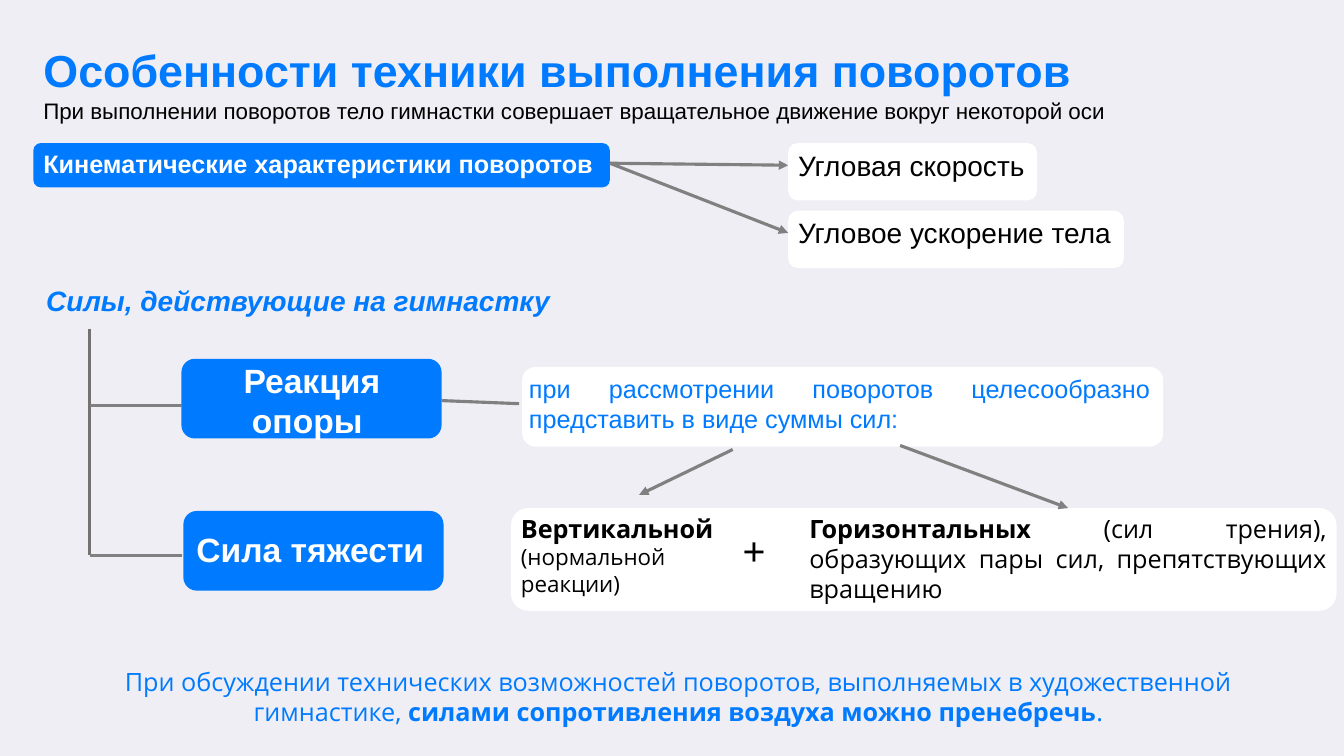
from dataclasses import dataclass

from lxml import etree
from pptx import Presentation
from pptx import util as u
from pptx.dml.color import RGBColor
from pptx.enum import shapes, text
from pptx.oxml.ns import qn
from pptx.shapes.autoshape import Shape
from pptx.shapes.connector import Connector
from pptx.slide import Slide


@dataclass(frozen=True)
class Theme:
    background: str = "EEEEF4"
    accent: str = "007AFF"
    white: str = "FFFFFF"
    black: str = "000000"
    arrow: str = "808080"
    spine: str = "767171"
    heading_font: str = "Arial"
    body_font: str = "Open Sans"
    title: int = 32
    plus: int = 28
    force: int = 24
    item: int = 20
    body: int = 18
    small: int = 16
    line: float = 2.25


THEME = Theme()
LEFT, CENTER, JUSTIFY = text.PP_ALIGN.LEFT, text.PP_ALIGN.CENTER, text.PP_ALIGN.JUSTIFY
TOP_SIDE, LEFT_SIDE, RIGHT_SIDE = 0, 1, 3


@dataclass(frozen=True)
class Box:
    left: float
    top: float
    width: float
    height: float

    def lengths(self) -> tuple[u.Pt, u.Pt, u.Pt, u.Pt]:
        return u.Pt(self.left), u.Pt(self.top), u.Pt(self.width), u.Pt(self.height)


@dataclass(frozen=True)
class Card:
    box: Box
    color: str


@dataclass(frozen=True)
class Words:
    content: str
    size: int
    color: str = THEME.black
    bold: bool = False
    italic: bool = False
    font: str = THEME.heading_font


@dataclass(frozen=True)
class Caption:
    box: Box
    words: tuple[Words, ...]
    align: text.PP_ALIGN = LEFT
    wrap: bool = True
    spacing: float = 1.0


@dataclass(frozen=True)
class Line:
    start: tuple[float, float]
    end: tuple[float, float]
    color: str = THEME.arrow
    arrow: bool = False


def write(shape: Shape, caption: Caption) -> None:
    frame = shape.text_frame
    frame.word_wrap = caption.wrap
    paragraph = frame.paragraphs[0]
    paragraph.alignment = caption.align
    paragraph.line_spacing = caption.spacing
    for words in caption.words:
        run = paragraph.add_run()
        run.text = words.content
        run.font.name = words.font
        run.font.size = u.Pt(words.size)
        run.font.bold = words.bold
        run.font.italic = words.italic
        run.font.color.rgb = RGBColor.from_string(words.color)


def add_card(slide: Slide, card: Card) -> None:
    shape = slide.shapes.add_shape(shapes.MSO_SHAPE.ROUNDED_RECTANGLE, *card.box.lengths())
    shape.shadow.inherit = False
    shape.fill.solid()
    shape.fill.fore_color.rgb = RGBColor.from_string(card.color)
    shape.line.fill.background()


def add_caption(slide: Slide, caption: Caption) -> Shape:
    shape = slide.shapes.add_textbox(*caption.box.lengths())
    write(shape, caption)
    return shape


def add_line(slide: Slide, line: Line) -> Connector:
    connector = slide.shapes.add_connector(
        shapes.MSO_CONNECTOR.STRAIGHT, *(u.Pt(value) for value in line.start + line.end))
    connector.line.color.rgb = RGBColor.from_string(line.color)
    connector.line.width = u.Pt(THEME.line)
    if line.arrow:
        etree.SubElement(connector.line._get_or_add_ln(), qn("a:tailEnd"), type="triangle")
    etree.SubElement(connector._element.spPr, qn("a:effectLst"))
    return connector


def join(slide: Slide, source: Shape, target: Shape, arrow: bool = False) -> None:
    connector = add_line(slide, Line((0, 0), (0, 0), arrow=arrow))
    connector.begin_connect(source, RIGHT_SIDE)
    connector.end_connect(target, LEFT_SIDE)


# Content
TITLE = Caption(Box(23.8, 19.4, 906.5, 65.5), (
    Words("Особенности техники выполнения поворотов", THEME.title, THEME.accent, bold=True),),
    spacing=0.9)

CARDS = (
    Card(Box(365, 362.9, 589.7, 73.4), THEME.white),
    Card(Box(373, 262.1, 457.9, 56.9), THEME.white),
    Card(Box(563, 102.2, 177.8, 41), THEME.white),
    Card(Box(563, 150.5, 239.8, 41), THEME.white),
    Card(Box(23.8, 102.2, 411.8, 31.7), THEME.accent),
    Card(Box(129.6, 256.3, 185.8, 56.9), THEME.accent),
    Card(Box(131, 365, 185.8, 56.9), THEME.accent),
)

CAPTIONS = {
    "subtitle": Caption(Box(23.8, 67.7, 906.5, 34.6), (
        Words("При выполнении поворотов тело гимнастки совершает вращательное движение "
              "вокруг некоторой оси", THEME.small),), JUSTIFY, spacing=0.9),
    "kinematics": Caption(Box(23.8, 102.2, 411.8, 28.8), (
        Words("Кинематические характеристики поворотов", THEME.body, THEME.white, bold=True),),
        wrap=False),
    "velocity": Caption(Box(563, 102.2, 177.8, 31.7), (
        Words("Угловая скорость", THEME.item),), wrap=False),
    "acceleration": Caption(Box(563, 150.5, 239.8, 31.7), (
        Words("Угловое ускорение тела", THEME.item),), wrap=False),
    "forces": Caption(Box(25.9, 198.7, 377.3, 31.7), (
        Words("Силы, действующие на гимнастку", THEME.item, THEME.accent, bold=True, italic=True),),
        wrap=False),
    "reaction": Caption(Box(130.3, 253.4, 185, 65.5), (
        Words("Реакция опоры ", THEME.force, THEME.white, bold=True),), CENTER),
    "gravity": Caption(Box(133.2, 374.4, 188.6, 36), (
        Words("Сила тяжести", THEME.force, THEME.white, bold=True),)),
    "sum": Caption(Box(370.8, 262.8, 457.9, 51.1), (
        Words("при рассмотрении поворотов целесообразно представить в виде суммы сил:",
              THEME.body, THEME.accent),), JUSTIFY),
    "vertical": Caption(Box(365, 362.9, 174.2, 67.7), (
        Words("Вертикальной ", THEME.body, bold=True, font=THEME.body_font),
        Words("(нормальной реакции)", THEME.small, font=THEME.body_font))),
    "plus": Caption(Box(523.4, 372.2, 31, 41), (Words("+", THEME.plus),), wrap=False),
    "horizontal": Caption(Box(571, 362.9, 383.8, 72.7), (
        Words("Горизонтальных", THEME.body, bold=True, font=THEME.body_font),
        Words(" (сил трения), образующих пары сил, препятствующих вращению",
              THEME.body, font=THEME.body_font)), JUSTIFY),
    "conclusion": Caption(Box(32.4, 472.3, 904.3, 51.1), (
        Words("При обсуждении технических возможностей поворотов, выполняемых в "
              "художественной гимнастике, ", THEME.body, THEME.accent, font=THEME.body_font),
        Words("силами сопротивления воздуха можно пренебречь", THEME.body, THEME.accent,
              bold=True, font=THEME.body_font),
        Words(".", THEME.body, THEME.accent, font=THEME.body_font)), CENTER),
}

SPINE_X, BRANCH_END, REACTION_Y, GRAVITY_Y = 64.1, 130.3, 289.4, 396.7
LINES = (
    Line((SPINE_X, 234.7), (SPINE_X, GRAVITY_Y), THEME.spine),
    Line((SPINE_X, REACTION_Y), (BRANCH_END, REACTION_Y)),
    Line((SPINE_X, GRAVITY_Y), (BRANCH_END, GRAVITY_Y)),
    Line((523.4, 321.1), (456.5, 353.5), arrow=True),
)


def main() -> None:
    deck = Presentation()
    deck.slide_width, deck.slide_height = u.Pt(960), u.Pt(540)
    slide = deck.slides.add_slide(deck.slide_layouts.get_by_name("Title Only"))
    slide.background.fill.solid()
    slide.background.fill.fore_color.rgb = RGBColor.from_string(THEME.background)

    # Title
    title = slide.shapes.title
    title.left, title.top, title.width, title.height = TITLE.box.lengths()
    title.text_frame.vertical_anchor = text.MSO_ANCHOR.MIDDLE
    write(title, TITLE)

    # Cards and their texts
    for card in CARDS:
        add_card(slide, card)
    placed = {name: add_caption(slide, caption) for name, caption in CAPTIONS.items()}

    # Lines and arrows
    for line in LINES:
        add_line(slide, line)
    for feature in ("velocity", "acceleration"):
        join(slide, placed["kinematics"], placed[feature], arrow=True)
    join(slide, placed["reaction"], placed["sum"])
    to_horizontal = add_line(slide, Line((643, 318.2), (762.5, 362.9), arrow=True))
    to_horizontal.end_connect(placed["horizontal"], TOP_SIDE)

    deck.save("out.pptx")


if __name__ == "__main__":
    main()
